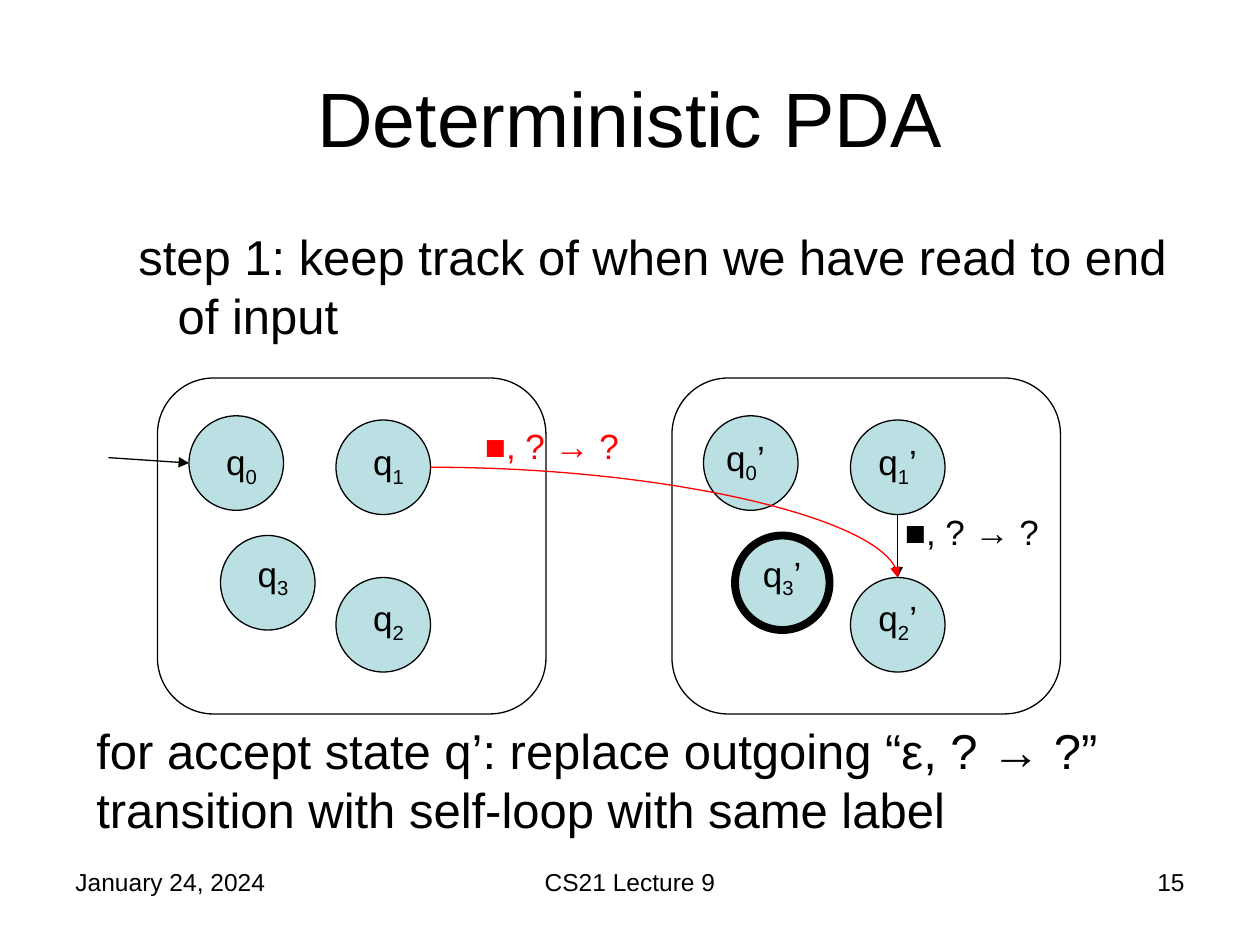
from pptx import Presentation
from pptx.dml.color import RGBColor
from pptx.enum.shapes import MSO_CONNECTOR, MSO_SHAPE
from pptx.enum.text import MSO_ANCHOR, PP_ALIGN
from pptx.oxml.ns import qn
from pptx.util import Pt
from lxml import etree

BLACK = RGBColor(0x00, 0x00, 0x00)
RED = RGBColor(0xFF, 0x00, 0x00)
PALE_BLUE = RGBColor(0xBB, 0xE0, 0xE3)
LEFT, CENTER, RIGHT = PP_ALIGN.LEFT, PP_ALIGN.CENTER, PP_ALIGN.RIGHT
TOP, MIDDLE = MSO_ANCHOR.TOP, MSO_ANCHOR.MIDDLE
STRAIGHT, CURVE = MSO_CONNECTOR.STRAIGHT, MSO_CONNECTOR.CURVE
OVAL, ROUNDED = MSO_SHAPE.OVAL, MSO_SHAPE.ROUNDED_RECTANGLE

FONT = "Arial"
STATE_SIZE = 54
LABEL_HEIGHT = 31
THIN, THICK = 0.75, 4.5
PANEL_TOP, PANEL_WIDTH, PANEL_HEIGHT = 216, 222, 192
PLAIN_LEFT, PRIMED_LEFT = 90, 384
STATE_OFFSETS = {"0": (18, 21.6), "3": (36, 90), "1": (102, 24), "2": (102, 114)}
PLAIN_LABELS = {"0": (12, 10.8, 36), "3": (12, 6, 36), "1": (12, 8.4, 36), "2": (12, 7.2, 36)}
PRIMED_LABELS = {"0": (0, 8.4, 48), "3": (6, 6, 42), "1": (6, 8.4, 42), "2": (0, 7.2, 54)}
TRANSITION = "■, ? → ?"


def add_text(page, box, runs, size, align=LEFT, color=BLACK, anchor=TOP):
    """Place one paragraph of (text, baseline) runs in a box and return it."""
    frame = page.shapes.add_textbox(*map(Pt, box)).text_frame
    frame.word_wrap = True
    frame.vertical_anchor = anchor
    para = frame.paragraphs[0]
    para.alignment = align
    for text, baseline in runs:
        span = para.add_run()
        span.text = text
        span.font.name = FONT
        span.font.size = Pt(size)
        span.font.color.rgb = color
        if baseline:
            span.font._element.set("baseline", str(baseline))
    return para


def add_outline(page, kind, box, width=THIN, fill=None):
    """Draw a black-edged preset shape, filled when a colour is given."""
    shape = page.shapes.add_shape(kind, *map(Pt, box))
    shape.shadow.inherit = False
    shape.line.color.rgb = BLACK
    shape.line.width = Pt(width)
    if fill is None:
        shape.fill.background()
    else:
        shape.fill.solid()
        shape.fill.fore_color.rgb = fill
    return shape


def add_arrow(page, kind, start, end, color=BLACK):
    """Draw a thin arrow from start to end; a curved one bends once."""
    arrow = page.shapes.add_connector(kind, *map(Pt, start + end))
    arrow.line.color.rgb = color
    arrow.line.width = Pt(THIN)
    properties = arrow._element.spPr
    if kind == CURVE:
        properties.find(qn("a:prstGeom")).set("prst", "curvedConnector2")
    etree.SubElement(properties.find(qn("a:ln")), qn("a:tailEnd"), type="triangle")
    etree.SubElement(properties, qn("a:effectLst"))


def add_automaton(page, box, labels, mark="", accepting=""):
    """Draw a rounded panel with four labelled states, one possibly accepting."""
    left, top, _, _ = box
    add_outline(page, ROUNDED, box).adjustments[0] = 0.167
    for index, (across, down) in STATE_OFFSETS.items():
        state_left, state_top = left + across, top + down
        width = THICK if index == accepting else THIN
        add_outline(page, OVAL, (state_left, state_top, STATE_SIZE, STATE_SIZE), width, PALE_BLUE)
        shift, drop, label_width = labels[index]
        label_box = (state_left + shift, state_top + drop, label_width, LABEL_HEIGHT)
        runs = [("q", 0), (index, -25000)]
        if mark:
            runs.append((mark, 0))
        add_text(page, label_box, runs, 20, CENTER)


def add_transitions(page):
    """Draw the start arrow and the two labelled transitions."""
    add_arrow(page, STRAIGHT, (62, 261.5), (108, 264.6))
    add_arrow(page, STRAIGHT, (513, 294), (513, 330))
    add_text(page, (510, 288, 102, LABEL_HEIGHT), [(TRANSITION, 0)], 20)
    add_text(page, (270, 239, 102, LABEL_HEIGHT), [(TRANSITION, 0)], 20, color=RED)
    add_arrow(page, CURVE, (246, 267), (513, 330), RED)


def add_wording(page):
    """Place the title, the step above the panels and the note below them."""
    add_text(page, (36, 21.6, 648, 90), [("Deterministic PDA", 0)], 44, CENTER, anchor=MIDDLE)
    step = "step 1: keep track of when we have read to end of input"
    para = add_text(page, (36, 126, 648, 84), [(step, 0)], 28)
    indents = para._p.get_or_add_pPr()
    indents.set("marL", str(Pt(58.5)))
    indents.set("indent", str(Pt(-22.5)))
    note = "for accept state q’: replace outgoing “ε, ? → ?” transition with self-loop with same label"
    add_text(page, (48, 408, 618, 74), [(note, 0)], 28)


def add_footer(page, top, height):
    """Place the date, the lecture name and the page number."""
    for left, width, text, align in (
        (36, 168, "January 24, 2024", LEFT),
        (246, 228, "CS21 Lecture 9", CENTER),
        (516, 168, "15", RIGHT),
    ):
        add_text(page, (left, top, width, height), [(text, 0)], 14, align)


def main():
    """Build the slide and save it."""
    deck = Presentation()
    deck.slide_width, deck.slide_height = Pt(720), Pt(540)
    page = deck.slides.add_slide(deck.slide_layouts[6])
    add_footer(page, 492, 37.5)
    add_wording(page)
    panel = (PANEL_TOP, PANEL_WIDTH, PANEL_HEIGHT)
    add_automaton(page, (PLAIN_LEFT, *panel), PLAIN_LABELS)
    add_automaton(page, (PRIMED_LEFT, *panel), PRIMED_LABELS, "’", "3")
    add_transitions(page)
    deck.save("out.pptx")


if __name__ == "__main__":
    main()
